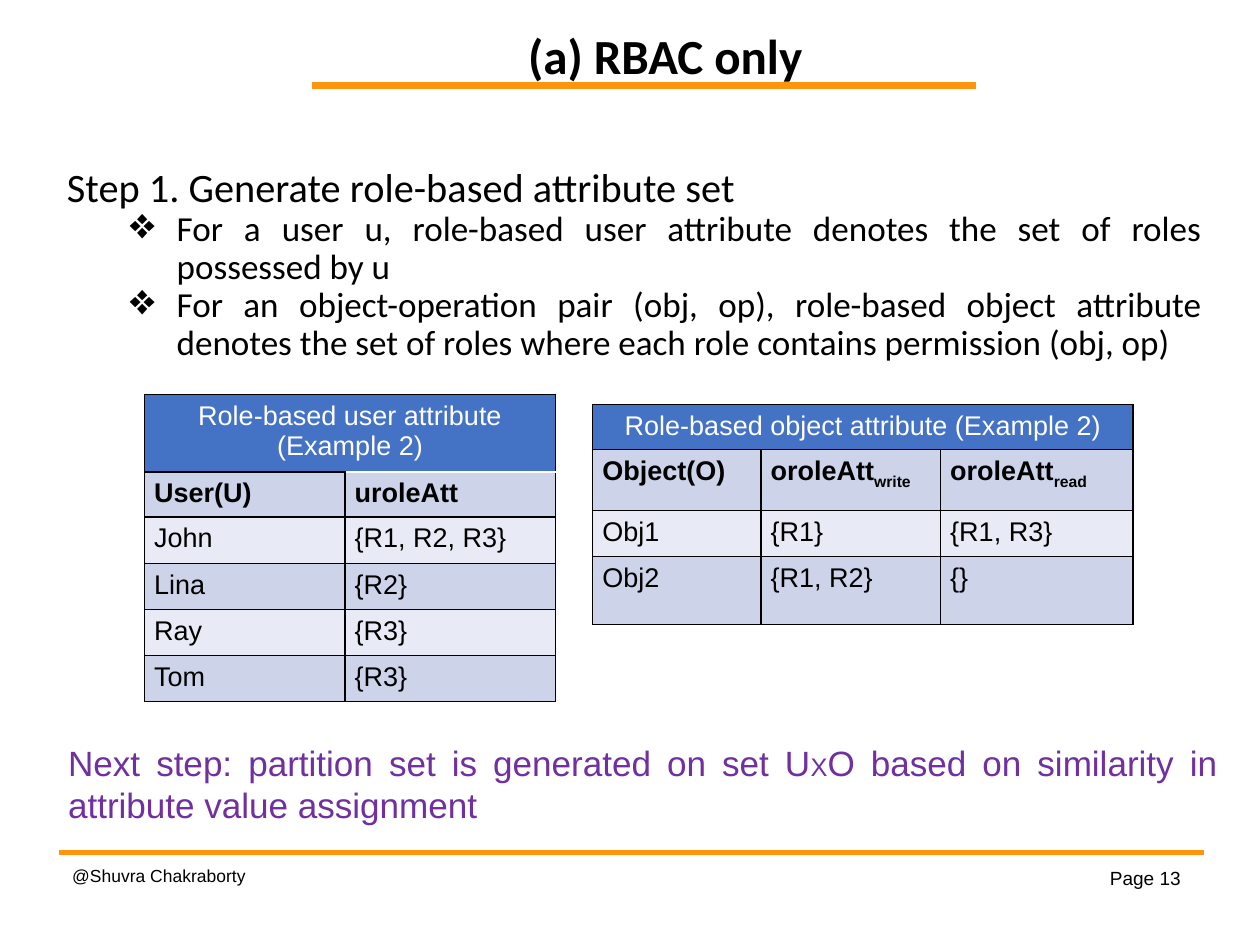
from lxml.etree import SubElement
from pptx import Presentation
from pptx.dml.color import RGBColor
from pptx.enum.shapes import MSO_CONNECTOR, MSO_SHAPE
from pptx.enum.text import MSO_ANCHOR as Anchor, PP_ALIGN as Align
from pptx.oxml.ns import qn
from pptx.util import Pt

BLACK = RGBColor(0x00, 0x00, 0x00)
WHITE = RGBColor(0xFF, 0xFF, 0xFF)
ORANGE = RGBColor(0xFF, 0x95, 0x0E)
PURPLE = RGBColor(0x70, 0x30, 0xA0)
HEADER_BLUE = RGBColor(0x44, 0x72, 0xC4)
DARK_BAND = RGBColor(0xCD, 0xD4, 0xEA)
LIGHT_BAND = RGBColor(0xE8, 0xEB, 0xF5)

STEP = "Step 1. Generate role-based attribute set"
DEFINITIONS = [
    "For a user u, role-based user attribute denotes the set of roles possessed by u",
    "For an object-operation pair (obj, op), role-based object attribute denotes "
    "the set of roles where each role contains permission (obj, op)",
]
NEXT_STEP = [
    ("Next step: partition set is generated on set U", 22.1),
    ("X", 16),
    ("O based on similarity in attribute value assignment", 22.1),
]

# An underscore sets off a subscript.
USER_ROWS = [
    ["User(U)", "uroleAtt"],
    ["John", "{R1, R2, R3}"],
    ["Lina", "{R2}"],
    ["Ray", "{R3}"],
    ["Tom", "{R3}"],
]
OBJECT_ROWS = [
    ["Object(O)", "oroleAtt_write", "oroleAtt_read"],
    ["Obj1", "{R1}", "{R1, R3}"],
    ["Obj2", "{R1, R2}", "{}"],
]


def style_run(run, size, color=BLACK, name="Arial", bold=False):
    run.font.size = Pt(size)
    run.font.name = name
    run.font.bold = bold
    run.font.color.rgb = color


def write(paragraph, text, size, align=Align.LEFT, **style):
    paragraph.text = text
    paragraph.alignment = align
    for run in paragraph.runs:
        style_run(run, size, **style)


def add_text_frame(slide, left, top, width, height, anchor=Anchor.TOP):
    box = slide.shapes.add_textbox(Pt(left), Pt(top), Pt(width), Pt(height))
    frame = box.text_frame
    frame.word_wrap = True
    frame.vertical_anchor = anchor
    return frame


def add_rule(slide, left, right, y):
    """Draw an orange line with square ends."""
    rule = slide.shapes.add_connector(
        MSO_CONNECTOR.STRAIGHT, Pt(left), Pt(y), Pt(right), Pt(y))
    rule.line.color.rgb = ORANGE
    rule.line.width = Pt(4.31)
    properties = rule._element.spPr
    properties.find(qn("a:ln")).set("cap", "sq")
    SubElement(properties, qn("a:effectLst"))


def add_diamond_bullet(paragraph):
    properties = paragraph._p.get_or_add_pPr()
    properties.set("marL", str(Pt(69.1)))
    properties.set("indent", str(Pt(-29.5)))
    color = SubElement(properties, qn("a:buClr"))
    SubElement(color, qn("a:srgbClr"), val=str(BLACK))
    SubElement(properties, qn("a:buSzPct"), val="125000")
    SubElement(properties, qn("a:buChar"), char="❖")


def add_step(slide):
    frame = add_text_frame(slide, 35.1, 102.2, 728.6, 417.6)
    heading = frame.paragraphs[0]
    write(heading, STEP, 25.4, Align.JUSTIFY, name="Calibri")
    heading.line_spacing = 0.9
    for definition in DEFINITIONS:
        item = frame.add_paragraph()
        item.level = 1
        add_diamond_bullet(item)
        write(item, definition, 22.1, Align.JUSTIFY, name="Calibri")
        item.line_spacing = 0.9


def set_borders(cell, top_color):
    properties = cell._tc.get_or_add_tcPr()
    for side in "LRTB":
        color = top_color if side == "T" else BLACK
        border = SubElement(properties, qn(f"a:ln{side}"), w=str(Pt(0.96)))
        fill = SubElement(border, qn("a:solidFill"))
        SubElement(fill, qn("a:srgbClr"), val=str(color))


def format_cell(cell, fill, top_color=BLACK):
    set_borders(cell, top_color)
    cell.fill.solid()
    cell.fill.fore_color.rgb = fill
    cell.margin_left = cell.margin_right = Pt(6)
    cell.margin_top = cell.margin_bottom = Pt(4)


def write_label(cell, label, bold):
    base, _, subscript = label.partition("_")
    paragraph = cell.text_frame.paragraphs[0]
    write(paragraph, base, 17, bold=bold)
    if subscript:
        run = paragraph.add_run()
        run.text = subscript
        style_run(run, 17, bold=bold)
        run._r.get_or_add_rPr().set("baseline", "-25000")


def add_attribute_table(slide, left, top, widths, heights, title, rows,
                        white_top=None):
    """Draw a titled table; white_top names a label with a white top border."""
    table = slide.shapes.add_table(
        len(heights), len(widths), Pt(left), Pt(top),
        Pt(sum(widths)), Pt(sum(heights))).table
    table.first_row = table.horz_banding = False
    for column, width in zip(table.columns, widths):
        column.width = Pt(width)
    for row, height in zip(table.rows, heights):
        row.height = Pt(height)

    header = table.cell(0, 0)
    header.merge(table.cell(0, len(widths) - 1))
    for column in range(len(widths)):
        format_cell(table.cell(0, column), HEADER_BLUE)
    write(header.text_frame.paragraphs[0], title, 17, Align.CENTER, color=WHITE)

    for r, labels in enumerate(rows, start=1):
        band = DARK_BAND if r % 2 else LIGHT_BAND
        for c, label in enumerate(labels):
            cell = table.cell(r, c)
            format_cell(cell, band, WHITE if label == white_top else BLACK)
            write_label(cell, label, bold=r == 1)


def add_next_step(slide):
    box = slide.shapes.add_shape(
        MSO_SHAPE.RECTANGLE, Pt(35.8), Pt(463.3), Pt(738), Pt(71.3))
    box.shadow.inherit = False
    box.fill.background()
    box.line.color.rgb = WHITE
    box.line.width = Pt(2.25)
    frame = box.text_frame
    frame.word_wrap = True
    frame.vertical_anchor = Anchor.TOP
    paragraph = frame.paragraphs[0]
    paragraph.alignment = Align.JUSTIFY
    for text, size in NEXT_STEP:
        run = paragraph.add_run()
        run.text = text
        style_run(run, size, PURPLE)


def main():
    deck = Presentation()
    deck.slide_width, deck.slide_height = Pt(793.7), Pt(595.28)
    slide = deck.slides.add_slide(deck.slide_layouts[6])

    add_rule(slide, 198.7, 612.7, 54)
    add_rule(slide, 39.4, 756, 536.4)

    page = add_text_frame(slide, 648.7, 542, 102.2, 21.6)
    write(page.paragraphs[0], "Page 13", 12, Align.RIGHT)

    title = add_text_frame(slide, 226.8, 6.5, 384.5, 50.4, Anchor.BOTTOM)
    write(title.paragraphs[0], "(a) RBAC only", 30.9, Align.CENTER,
          name="Calibri", bold=True)
    title.paragraphs[0].line_spacing = 0.9

    add_step(slide)
    add_attribute_table(
        slide, 91.1, 248.4, [126.3, 132.5], [48.5, 28] + [29.1] * 4,
        "Role-based user attribute (Example 2)", USER_ROWS, "uroleAtt")
    add_attribute_table(
        slide, 373.4, 254.9, [106, 113.2, 121.2], [28, 38.3, 29.1, 42.8],
        "Role-based object attribute (Example 2)", OBJECT_ROWS)
    add_next_step(slide)

    author = add_text_frame(slide, 38.4, 537.1, 218.2, 28.8, Anchor.MIDDLE)
    write(author.paragraphs[0], "@Shuvra Chakraborty", 11)

    deck.save("out.pptx")


if __name__ == "__main__":
    main()
